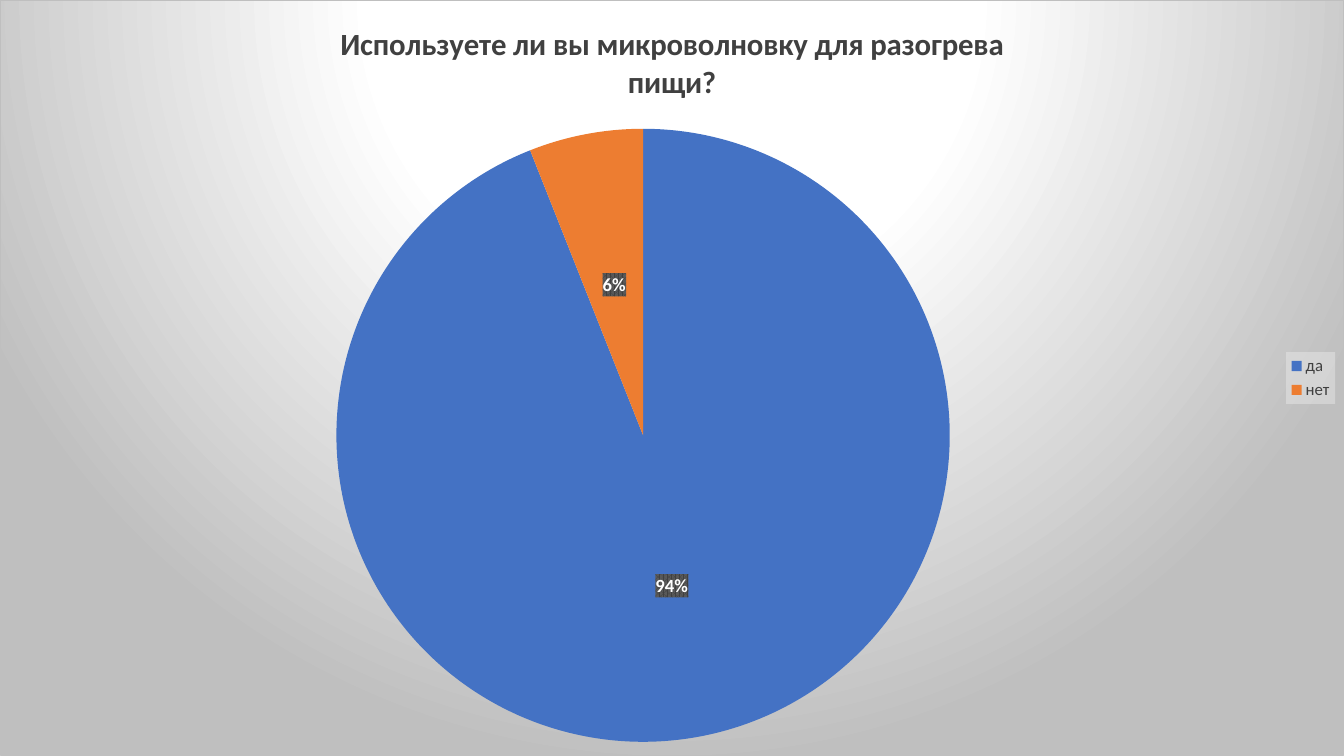
from dataclasses import dataclass

import lxml.etree
import pptx
import pptx.chart.data
import pptx.dml.color
import pptx.enum.chart
import pptx.oxml
import pptx.oxml.ns
import pptx.util

Cm = pptx.util.Cm
Pt = pptx.util.Pt
RGBColor = pptx.dml.color.RGBColor

WHITE = RGBColor(0xFF, 0xFF, 0xFF)
SILVER = RGBColor(0xBF, 0xBF, 0xBF)
PALE = RGBColor(0xF2, 0xF2, 0xF2)
CHARCOAL = RGBColor(0x40, 0x40, 0x40)
GRAPHITE = RGBColor(0x59, 0x59, 0x59)
BLUE = RGBColor(0x44, 0x72, 0xC4)
ORANGE = RGBColor(0xED, 0x7D, 0x31)

FONT = "Calibri"
QUESTION = "Используете ли вы микроволновку для разогрева\nпищи?"


@dataclass
class Answer:
    name: str
    percent: int
    color: RGBColor


ANSWERS = [Answer("да", 94, BLUE), Answer("нет", 6, ORANGE)]


def format_font(font, size: float, color: RGBColor, bold: bool = False) -> None:
    font.name = FONT
    font.size = Pt(size)
    font.bold = bold
    font.color.rgb = color


def color_xml(color: RGBColor, inner: str = "") -> str:
    return f'<a:srgbClr val="{color}">{inner}</a:srgbClr>'


def chart_xml(tag: str, content: str) -> lxml.etree.ElementBase:
    names = pptx.oxml.ns.nsdecls("c", "a")
    return pptx.oxml.parse_xml(f"<c:{tag} {names}>{content}</c:{tag}>")


def add_question(chart) -> None:
    chart.has_title = True
    frame = chart.chart_title.text_frame
    frame.text = QUESTION
    for para in frame.paragraphs:
        for span in para.runs:
            format_font(span.font, 22, CHARCOAL, bold=True)
    chart.chart_title.include_in_layout = False


def add_legend(chart) -> None:
    chart.has_legend = True
    legend = chart.legend
    legend.position = pptx.enum.chart.XL_LEGEND_POSITION.RIGHT
    legend.include_in_layout = False
    format_font(legend.font, 12, CHARCOAL)
    fill = color_xml(PALE, '<a:alpha val="39000"/>')
    text = chart.element.xpath(".//c:legend/c:txPr")[0]
    text.addprevious(chart_xml("spPr", f"<a:solidFill>{fill}</a:solidFill>"))


def add_percentages(chart) -> None:
    labels = chart.plots[0].series[0].data_labels
    labels.show_value = False
    labels.show_percentage = True
    labels.number_format = "0%"
    labels.number_format_is_linked = False
    labels.position = pptx.enum.chart.XL_LABEL_POSITION.CENTER
    format_font(labels.font, 13.3, WHITE, bold=True)
    pattern = (f'<a:pattFill prst="pct75"><a:fgClr>{color_xml(CHARCOAL)}</a:fgClr>'
               f"<a:bgClr>{color_xml(GRAPHITE)}</a:bgClr></a:pattFill>")
    text = chart.element.xpath(".//c:ser/c:dLbls/c:txPr")[0]
    text.addprevious(chart_xml("spPr", pattern))


def paint_background(chart) -> None:
    stops = "".join(f'<a:gs pos="{place * 1000}">{color_xml(color)}</a:gs>'
                    for place, color in ((0, WHITE), (39, WHITE), (100, SILVER)))
    gradient = (f'<a:gradFill><a:gsLst>{stops}</a:gsLst><a:path path="circle">'
                '<a:fillToRect l="50000" t="-80000" r="50000" b="180000"/>'
                "</a:path></a:gradFill>")
    border = f'<a:ln w="{Pt(0.75)}"><a:solidFill>{color_xml(SILVER)}</a:solidFill></a:ln>'
    body = chart.element.xpath("c:chart")[0]
    body.addnext(chart_xml("spPr", gradient + border))


def place_pie(chart) -> None:
    area = chart.element.xpath("c:chart/c:plotArea")[0]
    for layout in area.xpath("c:layout"):
        area.remove(layout)
    shares = "".join(f'<c:{tag} val="{share}"/>' for tag, share in
                     (("x", 0.25), ("y", 0.17), ("w", 0.457), ("h", 0.812)))
    area.insert(0, chart_xml("layout", '<c:manualLayout><c:layoutTarget val="inner"/>'
                             '<c:xMode val="edge"/><c:yMode val="edge"/>'
                             f"{shares}</c:manualLayout>"))


def main() -> None:
    deck = pptx.Presentation()
    deck.slide_width = Cm(33.87)
    deck.slide_height = Cm(19.05)
    page = deck.slides.add_slide(deck.slide_layouts[6])

    # Pie chart over the whole slide
    data = pptx.chart.data.CategoryChartData()
    data.categories = [answer.name for answer in ANSWERS]
    data.add_series(QUESTION, [answer.percent for answer in ANSWERS])
    chart = page.shapes.add_chart(pptx.enum.chart.XL_CHART_TYPE.PIE, 0, 0,
                                  deck.slide_width, deck.slide_height, data).chart
    chart.font.name = FONT
    chart.font.size = Pt(10)

    # Slices
    chart.plots[0].vary_by_categories = True
    for index, answer in enumerate(ANSWERS):
        fill = chart.plots[0].series[0].points[index].format.fill
        fill.solid()
        fill.fore_color.rgb = answer.color

    # Text and surroundings
    add_question(chart)
    add_legend(chart)
    add_percentages(chart)
    paint_background(chart)
    place_pie(chart)

    deck.save("out.pptx")


if __name__ == "__main__":
    main()
